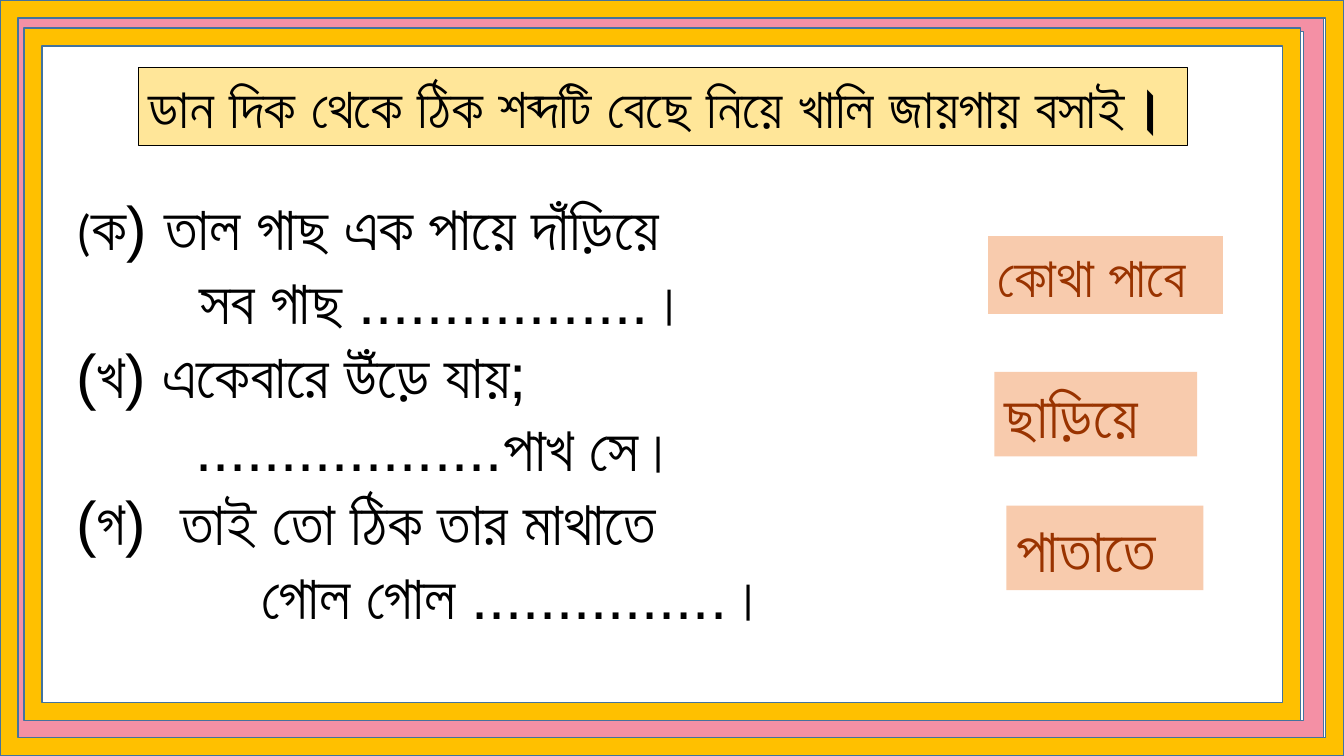
from lxml.etree import SubElement
from pptx import Presentation
from pptx.dml.color import RGBColor
from pptx.enum.shapes import MSO_SHAPE
from pptx.enum.text import MSO_ANCHOR, MSO_AUTO_SIZE, PP_ALIGN
from pptx.oxml import parse_xml
from pptx.oxml.ns import nsdecls, qn
from pptx.util import Cm, Pt

GOLD = RGBColor(0xFF, 0xC0, 0x00)
PINK = RGBColor(0xF4, 0x90, 0xA5)
BLUE = RGBColor(0x43, 0x73, 0x9E)
CREAM = RGBColor(0xFF, 0xE6, 0x99)
PEACH = RGBColor(0xF8, 0xCB, 0xAD)
RUST = RGBColor(0x99, 0x33, 0x00)
BLACK = RGBColor(0, 0, 0)

# Bengali base letters that join with the nukta dot into one character
NUKTA = chr(0x9BC)
JOINED = {chr(0x9A1): chr(0x9DC), chr(0x9AF): chr(0x9DF)}

deck = Presentation()
deck.slide_width, deck.slide_height = Cm(33.87), Cm(19.05)
slide = deck.slides.add_slide(deck.slide_layouts[6])


def add_box(kind, at, fill, edge=None, width=1):
    box = slide.shapes.add_shape(kind, *(Cm(v) for v in at))
    box.shadow.inherit = False
    box.fill.solid()
    box.fill.fore_color.rgb = fill
    if edge is None:
        box.line.fill.background()
    else:
        box.line.color.rgb = edge
        box.line.width = Pt(width)
    return box


def add_run(para, text, color, **form):
    for base, whole in JOINED.items():
        text = text.replace(base + NUKTA, whole)
    run = para.add_run()
    run.text = text
    run.font.color.rgb = color
    for key, val in form.items():
        setattr(run.font, key, val)
    return run


# Nested border frames, back to front
frames = [
    ((-0.15, -0.18, 34.04, 19.23), 0.024, GOLD),
    ((0.25, 0.3, 33.1, 18.36), 0.027, PINK),
    ((0.61, 0.71, 32.16, 17.45), 0.026, GOLD),
    ((0, 0, 33.87, 19.05), 0.024, GOLD),
]
for at, thick, fill in frames:
    frame = add_box(MSO_SHAPE.FRAME, at, fill, BLUE)
    frame.adjustments[0] = thick

# Title and the three answer words
title = add_box(MSO_SHAPE.RECTANGLE, (3.49, 1.7, 26.43, 1.96), CREAM, BLACK, 0.5)
labels = [(title, "ডান দিক থেকে ঠিক শব্দটি বেছে নিয়ে খালি জায়গায় বসাই।", 40, BLACK)]
words = [
    ("কোথা পাবে", 40, (24.9, 5.95, 5.92, 1.96)),
    ("ছাড়িয়ে", 44, (25.06, 9.37, 5.11, 2.13)),
    ("পাতাতে", 44, (25.36, 12.74, 4.97, 2.13)),
]
for text, size, at in words:
    labels.append((add_box(MSO_SHAPE.RECTANGLE, at, PEACH), text, size, RUST))

for box, text, size, color in labels:
    frame = box.text_frame
    form = {"word_wrap": True, "auto_size": MSO_AUTO_SIZE.SHAPE_TO_FIT_TEXT,
            "vertical_anchor": MSO_ANCHOR.TOP}
    for key, val in form.items():
        setattr(frame, key, val)
    para = frame.paragraphs[0]
    para.alignment = PP_ALIGN.LEFT
    run = add_run(para, text, color, name="Arial", size=Pt(size))
    if box is title:
        run.font.bold = True
        edge = parse_xml(f'<a:ln {nsdecls("a")} w="9525"/>')
        tint = SubElement(SubElement(edge, qn("a:solidFill")), qn("a:srgbClr"))
        tint.set("val", "FFFFFF")
        run.font._element.insert(0, edge)

# Verse lines with their left indents
verse = [
    ("ক) তাল গাছ এক পায়ে দাঁড়িয়ে", 0),
    ("সব গাছ .................।", 3.1),
    ("(খ) একেবারে উঁড়ে যায়;", 0),
    ("..................পাখ সে।", 3),
    ("(গ)  তাই তো ঠিক তার মাথাতে", 0),
    ("গোল গোল ...............।", 4.66),
]
body = slide.shapes.add_textbox(Cm(1.67), Cm(4.63), Cm(21.72), Cm(11.53)).text_frame
body.word_wrap = True
body.auto_size = MSO_AUTO_SIZE.SHAPE_TO_FIT_TEXT
for row, (text, left) in enumerate(verse):
    para = body.add_paragraph() if row else body.paragraphs[0]
    if left:
        para._p.get_or_add_pPr().set("marL", str(Cm(left)))
    if row == 0:
        add_run(para, "(", BLACK, name="Calibri", size=Pt(36))
    add_run(para, text, BLACK, name="Arial", size=Pt(44))

deck.save("out.pptx")
